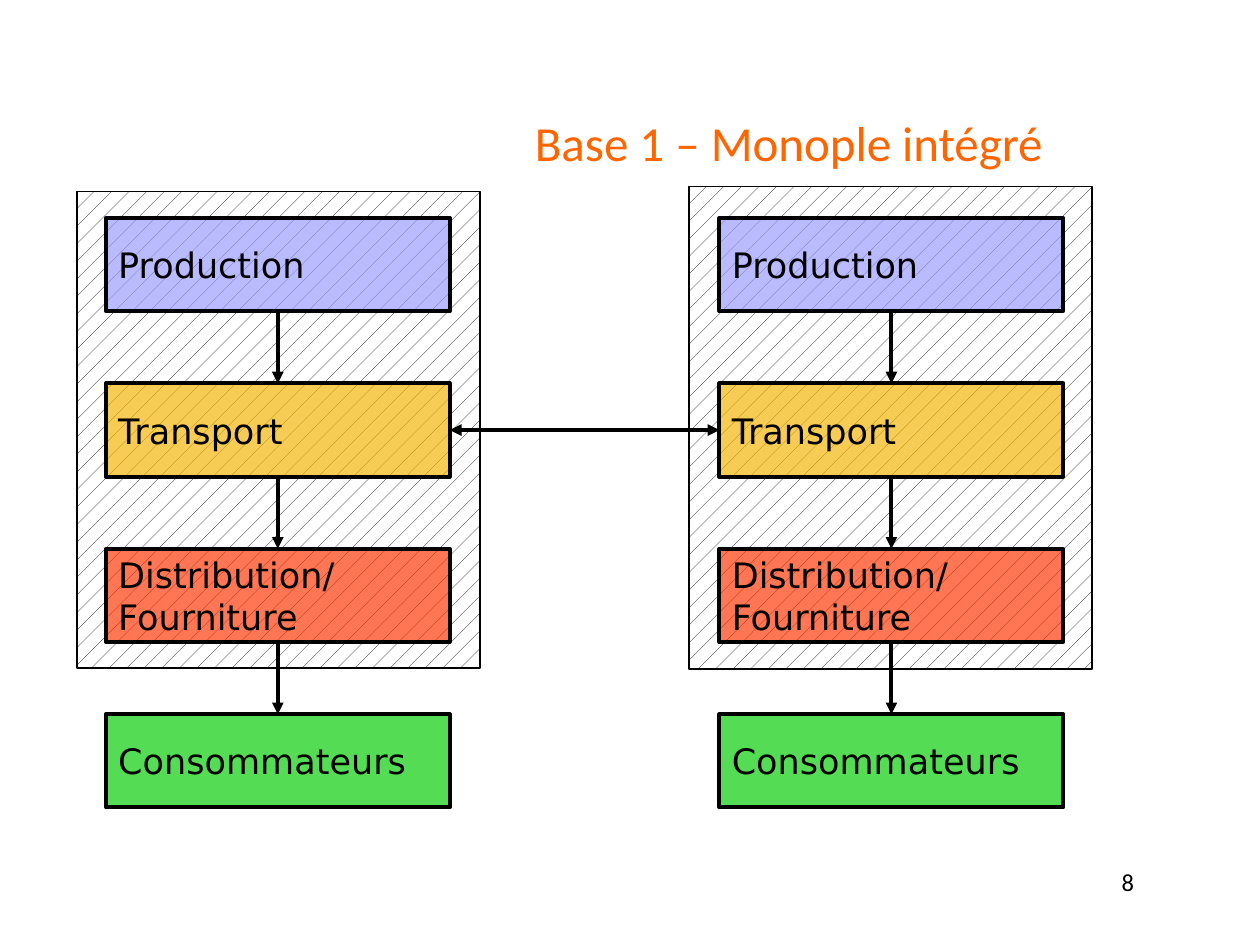
from itertools import pairwise

from lxml import etree
from pptx import Presentation
from pptx.dml.color import RGBColor
from pptx.enum.dml import MSO_PATTERN
from pptx.enum.shapes import MSO_CONNECTOR, MSO_SHAPE
from pptx.enum.text import MSO_ANCHOR, PP_ALIGN
from pptx.oxml.ns import qn
from pptx.util import Inches, Pt

RECT = MSO_SHAPE.RECTANGLE
STRAIGHT = MSO_CONNECTOR.STRAIGHT
DOTTED = MSO_PATTERN.PERCENT_5
TOP, MIDDLE = MSO_ANCHOR.TOP, MSO_ANCHOR.MIDDLE
LEFT, CENTER, RIGHT = PP_ALIGN.LEFT, PP_ALIGN.CENTER, PP_ALIGN.RIGHT
SIDE_TOP, SIDE_LEFT, SIDE_BOTTOM, SIDE_RIGHT = range(4)

COLORS = {
    "black": "000000",
    "white": "FFFFFF",
    "title": "FF6600",
    "production": "9999FF",
    "transport": "F4B400",
    "distribution": "FF3300",
    "consumers": "00CC00",
}
TITLE = "Base 1 – Monople intégré"
PAGE = "8"
STAGES = [
    ("Production", "production", False),
    ("Transport", "transport", False),
    ("Distribution/\vFourniture", "distribution", True),
    ("Consommateurs", "consumers", False),
]
MONOPOLIES = [
    {"frame": (0.61, 1.52, 3.2, 3.78), "left": 0.84},
    {"frame": (5.47, 1.48, 3.2, 3.83), "left": 5.71},
]
BOX_W, BOX_H = 2.73, 0.74
FIRST_TOP, STEP = 1.73, 1.313
OPACITY = 67


def rgb(name):
    return RGBColor.from_string(COLORS[name])


def write(sp, text, size, font="DejaVu Sans", color="black", align=LEFT,
          anchor=TOP, wrap=True):
    tf = sp.text_frame
    tf.word_wrap = wrap
    tf.vertical_anchor = anchor
    tf.text = text
    p = tf.paragraphs[0]
    p.alignment = align
    for r in p.runs:
        r.font.size = Pt(size)
        r.font.name = font
        r.font.color.rgb = rgb(color)


def add_rect(slide, at, line_width):
    sp = slide.shapes.add_shape(RECT, *map(Inches, at))
    sp.shadow.inherit = False
    sp.line.color.rgb = rgb("black")
    sp.line.width = Pt(line_width)
    return sp


def add_frame(slide, at):
    fill = add_rect(slide, at, 1).fill
    fill.patterned()
    fill.pattern = DOTTED
    fill.fore_color.rgb = rgb("black")
    fill.back_color.rgb = rgb("white")


def add_stage(slide, left, top, text, color, wrap):
    sp = add_rect(slide, (left, top, BOX_W, BOX_H), 2.25)
    sp.fill.solid()
    sp.fill.fore_color.rgb = rgb(color)
    clr = sp._element.spPr.find(qn("a:solidFill"))[0]
    etree.SubElement(clr, qn("a:alpha"), val=str(OPACITY * 1000))
    write(sp, text, 20, anchor=MIDDLE, wrap=wrap)
    return sp


def add_arrow(slide, start, start_side, end, end_side, ends=("tailEnd",)):
    cx = slide.shapes.add_connector(STRAIGHT, 0, 0, 0, 0)
    cx.begin_connect(start, start_side)
    cx.end_connect(end, end_side)
    cx.line.color.rgb = rgb("black")
    cx.line.width = Pt(2.25)
    ln = cx.line._get_or_add_ln()
    for tag in ends:
        etree.SubElement(ln, qn(f"a:{tag}"), type="triangle")
    etree.SubElement(cx._element.spPr, qn("a:effectLst"))


def add_monopoly(slide, frame, left):
    add_frame(slide, frame)
    boxes = [add_stage(slide, left, FIRST_TOP + i * STEP, *stage)
             for i, stage in enumerate(STAGES)]
    for upper, lower in pairwise(boxes):
        add_arrow(slide, upper, SIDE_BOTTOM, lower, SIDE_TOP)
    return boxes


def main():
    prs = Presentation()
    prs.slide_width, prs.slide_height = Inches(10), Inches(7.5)
    slide = prs.slides.add_slide(prs.slide_layouts[5])

    title = slide.shapes.title
    title.left, title.top = Inches(3.35), Inches(0.84)
    title.width, title.height = Inches(5.82), Inches(0.98)
    write(title, TITLE, 28, font="Calibri", color="title", align=CENTER)

    number = slide.shapes.add_textbox(*map(Inches, (7.17, 6.83, 1.93, 0.52)))
    write(number, PAGE, 14, font="Calibri", align=RIGHT)

    first, second = [add_monopoly(slide, **m) for m in MONOPOLIES]
    add_arrow(slide, first[1], SIDE_RIGHT, second[1], SIDE_LEFT,
              ends=("headEnd", "tailEnd"))

    prs.save("out.pptx")


if __name__ == "__main__":
    main()
